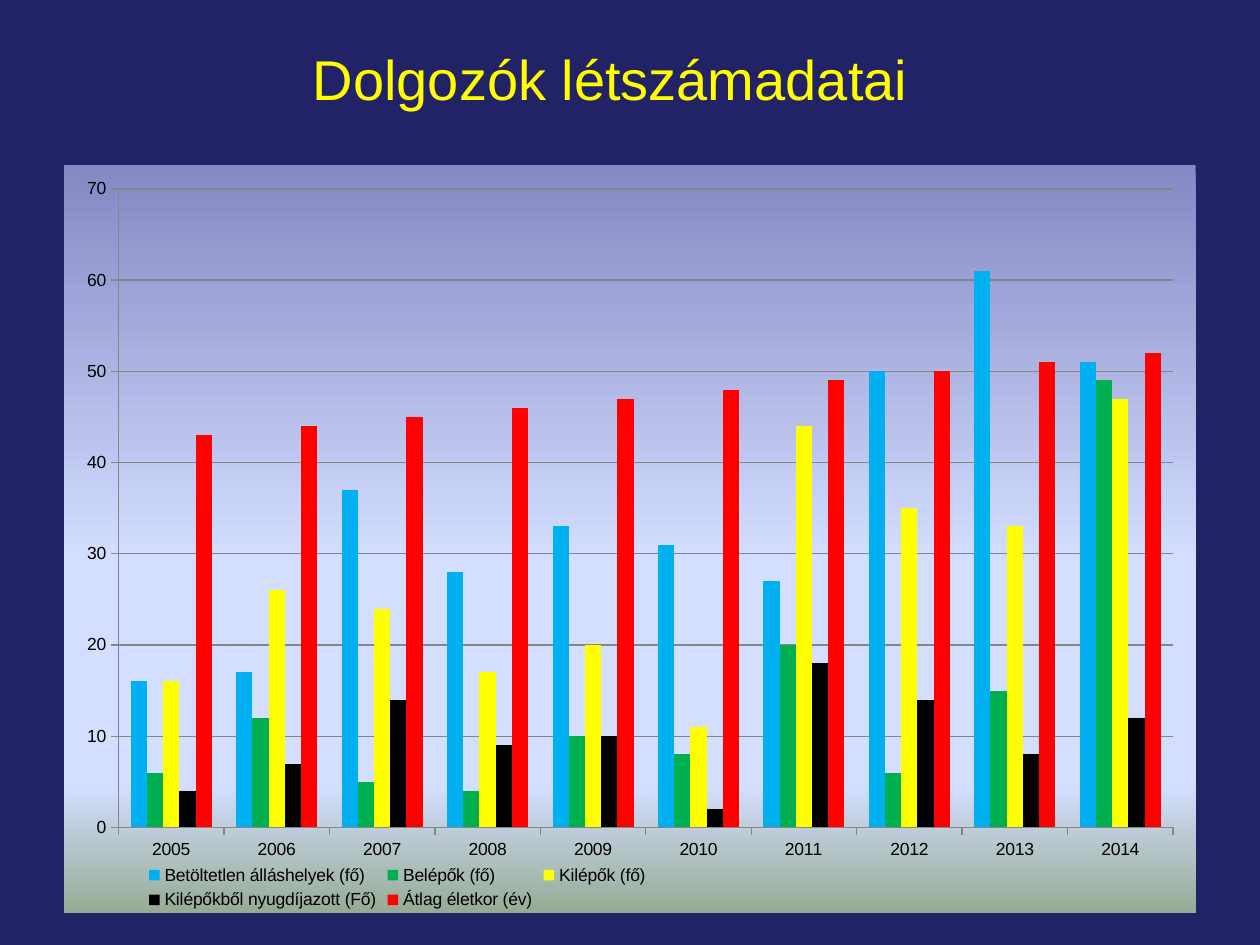
"""Build the staff headcount slide with a clustered column chart."""
from lxml import etree
from pptx import Presentation
from pptx.chart.data import CategoryChartData
from pptx.dml.color import RGBColor
from pptx.enum.chart import XL_CHART_TYPE, XL_LEGEND_POSITION, XL_TICK_MARK
from pptx.enum.text import MSO_ANCHOR, PP_ALIGN
from pptx.oxml import parse_xml
from pptx.oxml.ns import nsdecls, qn
from pptx.util import Inches, Pt

COLUMNS = XL_CHART_TYPE.COLUMN_CLUSTERED
BOTTOM = XL_LEGEND_POSITION.BOTTOM
OUTSIDE = XL_TICK_MARK.OUTSIDE
MIDDLE = MSO_ANCHOR.MIDDLE
CENTER = PP_ALIGN.CENTER

YEARS = range(2005, 2015)
SERIES = [
    ("Betöltetlen álláshelyek (fő)", "00B0F0", (16, 17, 37, 28, 33, 31, 27, 50, 61, 51)),
    ("Belépők (fő)", "00B050", (6, 12, 5, 4, 10, 8, 20, 6, 15, 49)),
    ("Kilépők (fő)", "FFFF00", (16, 26, 24, 17, 20, 11, 44, 35, 33, 47)),
    ("Kilépőkből nyugdíjazott (Fő)", "000000", (4, 7, 14, 9, 10, 2, 18, 14, 8, 12)),
    ("Átlag életkor (év)", "FF0000", (43, 44, 45, 46, 47, 48, 49, 50, 51, 52)),
]
STOPS = [(0, "8488C4"), (53, "D4DEFF"), (83, "D4DEFF"), (100, "96AB94")]


def rgb(value):
    return RGBColor.from_string(value)


def make_layout(**values):
    layout = etree.Element(qn("c:layout"))
    manual = etree.SubElement(layout, qn("c:manualLayout"))
    for tag, value in values.items():
        etree.SubElement(manual, qn(f"c:{tag}")).set("val", str(value))
    return layout


prs = Presentation()
prs.slide_width = Inches(10)
prs.slide_height = Inches(7.5)
s = prs.slides.add_slide(prs.slide_layouts[5])
s.background.fill.solid()
s.background.fill.fore_color.rgb = rgb("222267")

title = s.shapes.title
title.left, title.top = Inches(0.83), Inches(0.36)
title.width, title.height = Inches(8.03), Inches(0.59)
tf = title.text_frame
tf.text = "Dolgozók létszámadatai"
tf.vertical_anchor = MIDDLE
p = tf.paragraphs[0]
p.alignment = CENTER
p.line_spacing = 0.9
p.font.name = "Arial"
p.font.size = Pt(32)
p.font.color.rgb = rgb("FFFF00")

data = CategoryChartData()
data.categories = [str(year) for year in YEARS]
for name, color, values in SERIES:
    data.add_series(name, values)
chart = s.shapes.add_chart(
    COLUMNS, Inches(0.51), Inches(1.31), Inches(8.98), Inches(5.95), data
).chart
chart.has_title = False
chart.font.name = "Arial"
chart.font.size = Pt(10)
chart.font.color.rgb = rgb("000000")

plot = chart.plots[0]
plot.gap_width = 150
plot.overlap = 0
plot.vary_by_categories = False
for ser, (name, color, values) in zip(plot.series, SERIES):
    ser.format.fill.solid()
    ser.format.fill.fore_color.rgb = rgb(color)
    ser.invert_if_negative = False

value_axis = chart.value_axis
value_axis.minimum_scale = 0
value_axis.maximum_scale = 70
value_axis.major_unit = 10
value_axis.has_major_gridlines = True
for axis in (chart.category_axis, value_axis):
    axis.major_tick_mark = OUTSIDE
for part in (chart.category_axis, value_axis, value_axis.major_gridlines):
    part.format.line.color.rgb = rgb("868686")
    part.format.line.width = Pt(0.75)

chart.has_legend = True
chart.legend.position = BOTTOM
chart.legend.include_in_layout = False

plot_area = chart.element.find(".//" + qn("c:plotArea"))
legend = chart.element.find(".//" + qn("c:legend"))
for parent in (plot_area, legend):
    for old in parent.findall(qn("c:layout")):
        parent.remove(old)
plot_area.insert(0, make_layout(
    layoutTarget="inner", xMode="edge", yMode="edge", x=0.048, y=0.032, w=0.932, h=0.854))
legend.find(qn("c:legendPos")).addnext(make_layout(
    xMode="edge", yMode="edge", x=0.07, y=0.93))

stops = "".join(
    f'<a:gs pos="{pos * 1000}"><a:srgbClr val="{color}"/></a:gs>' for pos, color in STOPS)
chart.element.find(qn("c:chart")).addnext(parse_xml(
    f'<c:spPr {nsdecls("c", "a")}><a:gradFill><a:gsLst>{stops}</a:gsLst>'
    '<a:lin ang="5400000" scaled="0"/></a:gradFill><a:ln><a:noFill/></a:ln></c:spPr>'))

prs.save("out.pptx")
